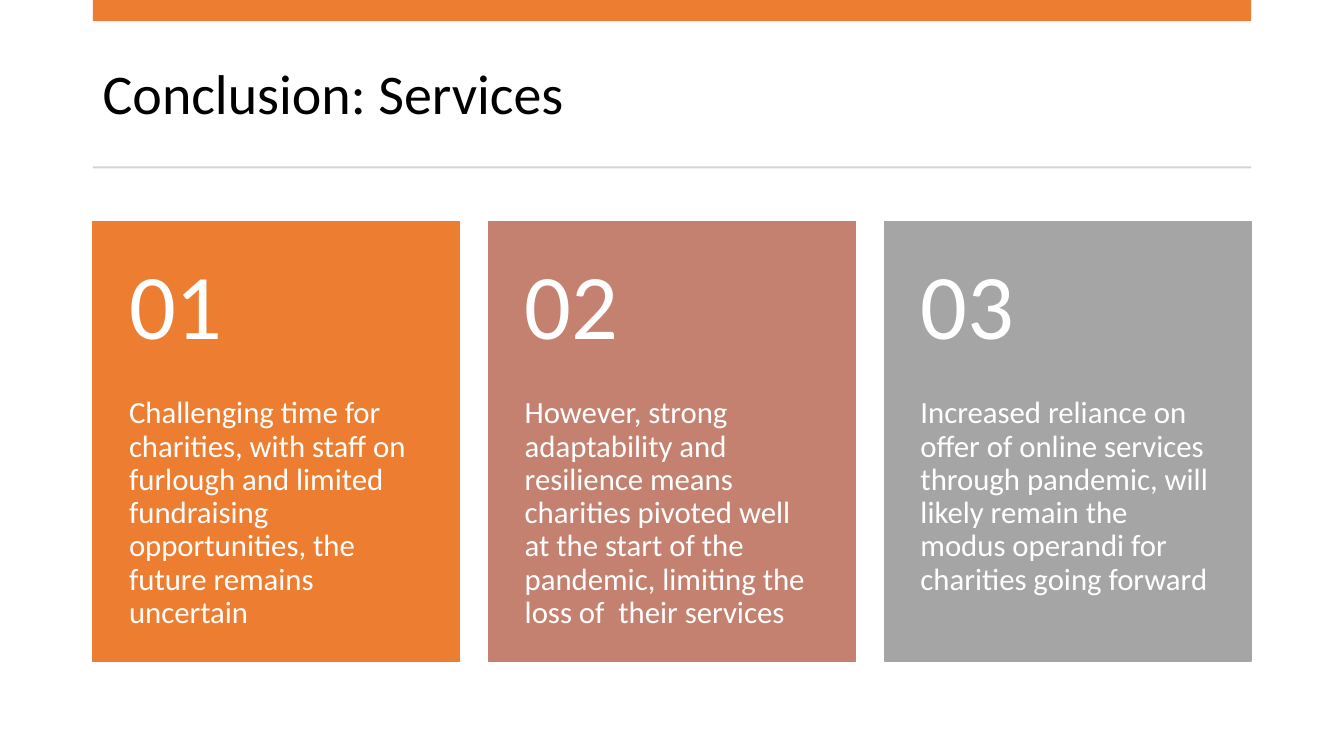
from dataclasses import dataclass

from pptx import Presentation
from pptx.dml.color import RGBColor as Rgb
from pptx.enum.shapes import MSO_SHAPE as Shape
from pptx.enum.text import MSO_ANCHOR as Anchor
from pptx.util import Inches, Pt


@dataclass(frozen=True)
class Theme:
    font: str = "Calibri"
    black: str = "000000"
    white: str = "FFFFFF"
    orange: str = "ED7D31"
    rose: str = "C48170"
    gray: str = "A5A5A5"
    rule: str = "D5D5D5"
    title: int = 40
    number: int = 66
    body: int = 22


THEME = Theme()

# Layout in inches
LEFT, WIDTH = 0.92, 11.49
TOP, CARD_W, CARD_H, HEAD_H = 2.2, 3.64, 4.36, 1.74
PAD = 0.36

CARDS = [
    (THEME.orange, "Challenging time for charities, with staff on furlough and "
     "limited fundraising opportunities, the future remains uncertain"),
    (THEME.rose, "However, strong adaptability and resilience means charities "
     "pivoted well at the start of the pandemic, limiting the loss of  their services"),
    (THEME.gray, "Increased reliance on offer of online services through pandemic, "
     "will likely remain the modus operandi for charities going forward"),
]


def add_rect(slide, box, color, edge=False):
    rect = slide.shapes.add_shape(Shape.RECTANGLE, *map(Inches, box))
    rect.shadow.inherit = False
    rect.fill.solid()
    rect.fill.fore_color.rgb = Rgb.from_string(color)
    if edge:
        rect.line.color.rgb = Rgb.from_string(color)
        rect.line.width = Pt(1)
    else:
        rect.line.fill.background()


def add_text(slide, box, text, size, color, anchor=Anchor.MIDDLE,
             inset=(0.1, 0.05, 0.1, 0.05)):
    frame = slide.shapes.add_textbox(*map(Inches, box)).text_frame
    frame.word_wrap = True
    frame.vertical_anchor = anchor
    (frame.margin_left, frame.margin_top,
     frame.margin_right, frame.margin_bottom) = map(Inches, inset)
    frame.text = text
    para = frame.paragraphs[0]
    para.line_spacing = 0.9
    font = para.runs[0].font
    font.name = THEME.font
    font.size = Pt(size)
    font.color.rgb = Rgb.from_string(color)


def add_card(slide, left, number, color, text):
    add_rect(slide, (left, TOP, CARD_W, CARD_H), color, edge=True)
    add_text(slide, (left, TOP + HEAD_H, CARD_W, CARD_H - HEAD_H), text,
             THEME.body, THEME.white, Anchor.TOP, (PAD, 0, PAD, PAD))
    add_text(slide, (left, TOP, CARD_W, HEAD_H), f"{number:02}",
             THEME.number, THEME.white, inset=(PAD, PAD / 2, PAD, PAD / 2))


def main():
    deck = Presentation()
    deck.slide_width, deck.slide_height = Inches(13.33), Inches(7.5)
    slide = deck.slides.add_slide(deck.slide_layouts[6])

    # Title between the top bar and the rule
    add_text(slide, (LEFT, 0.37, WIDTH, 1.18), "Conclusion: Services",
             THEME.title, THEME.black)
    add_rect(slide, (LEFT, 0, WIDTH, 0.21), THEME.orange)
    add_rect(slide, (LEFT, 1.65, WIDTH, 0.02), THEME.rule)

    # Numbered cards, spread evenly across the width
    step = (WIDTH - CARD_W) / (len(CARDS) - 1)
    for i, (color, text) in enumerate(CARDS):
        add_card(slide, LEFT + i * step, i + 1, color, text)

    deck.save("out.pptx")


if __name__ == "__main__":
    main()
